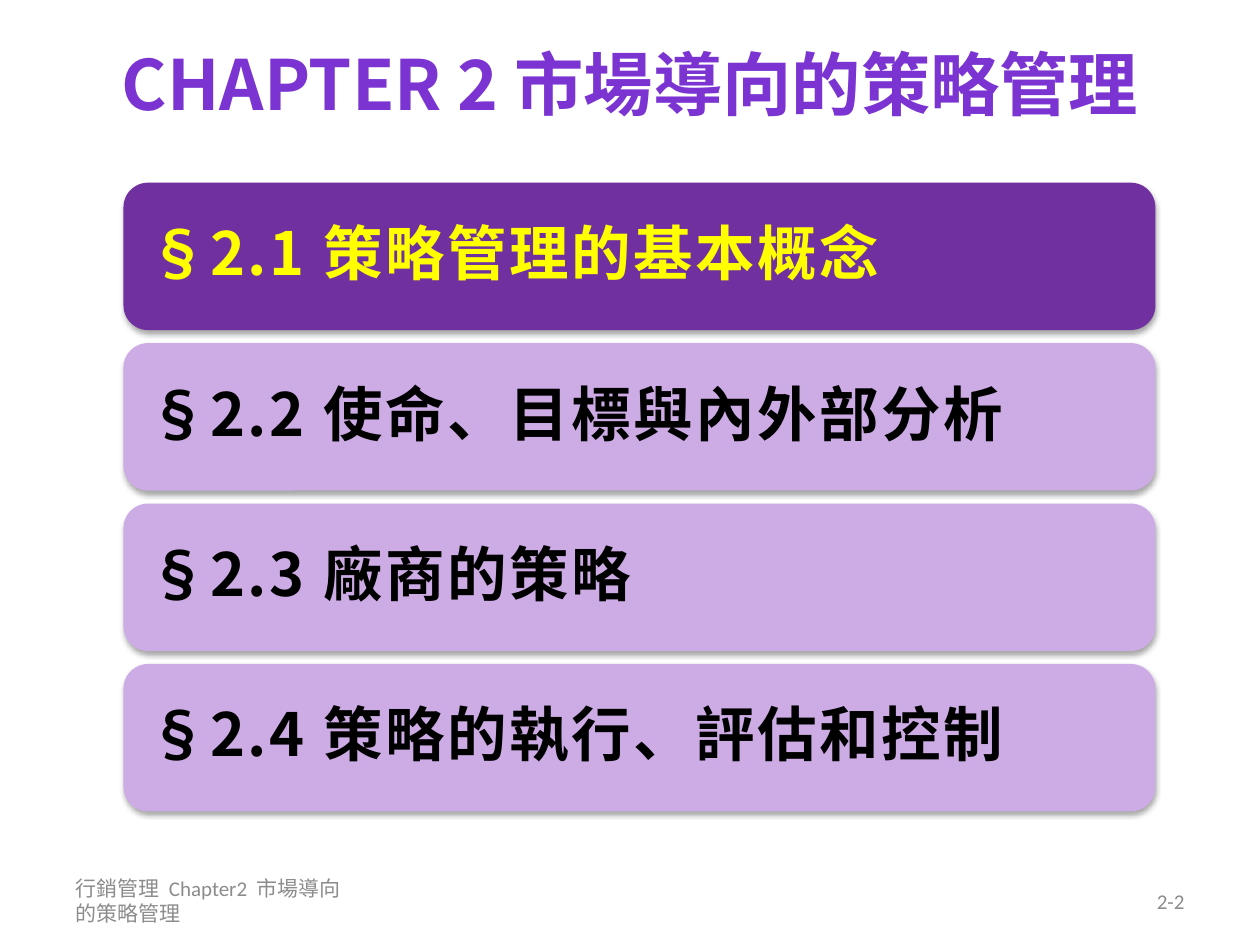
from lxml import etree
from pptx import Presentation
from pptx.dml.color import RGBColor
from pptx.enum.shapes import MSO_SHAPE
from pptx.enum.text import MSO_ANCHOR, MSO_AUTO_SIZE, PP_ALIGN
from pptx.oxml import parse_xml
from pptx.oxml.ns import qn
from pptx.util import Inches, Pt

ROUNDED = MSO_SHAPE.ROUNDED_RECTANGLE
MIDDLE = MSO_ANCHOR.MIDDLE
NO_FIT = MSO_AUTO_SIZE.NONE
LEFT, CENTER, RIGHT = PP_ALIGN.LEFT, PP_ALIGN.CENTER, PP_ALIGN.RIGHT
DRAWING = 'xmlns:a="http://schemas.openxmlformats.org/drawingml/2006/main"'

THEME = {
    "title": {"name": "Noto Sans CJK SC", "size": Pt(39.6), "bold": True},
    "section": {"name": "Noto Sans CJK SC", "size": Pt(34), "bold": True},
    "footer": {"name": "Calibri", "size": Pt(12), "bold": False},
    "title_stops": [(0, "3D1B67"), (43, "7B34D2"), (48, "7330C4"), (100, "3D1B67")],
    "title_outline": "5E457C",
    "footer_color": "8C8C8C",
    "current": ("7030A0", "FFFF00"),
    "other": ("CDACE6", "000000"),
}


def write(shape, text, style, align, color=None):
    """Fill a shape with one formatted, vertically centred paragraph."""
    frame = shape.text_frame
    for name, value in {"word_wrap": True, "auto_size": NO_FIT,
                        "vertical_anchor": MIDDLE}.items():
        setattr(frame, name, value)
    para = frame.paragraphs[0]
    para.alignment = align
    span = para.add_run()
    span.text = text
    for name, value in THEME[style].items():
        setattr(span.font, name, value)
    if color:
        span.font.color.rgb = RGBColor.from_string(color)
    properties = span.font._element
    east_asian = etree.SubElement(properties, qn("a:ea"))
    east_asian.set("typeface", THEME[style]["name"])
    return para, properties


deck = Presentation()
deck.slide_width, deck.slide_height = Inches(10), Inches(7.5)
page = deck.slides.add_slide(deck.slide_layouts[5])

# Title with a vertical gradient and a thin outline
title = page.shapes.title
title.left, title.top, title.width, title.height = map(Inches, (0.5, 0, 9, 1.31))
_, properties = write(title, "CHAPTER 2 市場導向的策略管理", "title", CENTER)
stops = "".join(f'<a:gs pos="{place * 1000}"><a:srgbClr val="{color}"/></a:gs>'
                for place, color in THEME["title_stops"])
properties.insert(0, parse_xml(
    f'<a:ln {DRAWING} w="{Pt(0.71)}"><a:solidFill>'
    f'<a:srgbClr val="{THEME["title_outline"]}"/></a:solidFill></a:ln>'))
properties.insert(1, parse_xml(
    f'<a:gradFill {DRAWING}><a:gsLst>{stops}</a:gsLst>'
    '<a:lin ang="5400000" scaled="0"/></a:gradFill>'))

# Section cards in one evenly spaced column
sections = ["§2.1 策略管理的基本概念", "§2.2 使命、目標與內外部分析",
            "§2.3 廠商的策略", "§2.4 策略的執行、評估和控制"]
column_left, column_top, column_width, column_height = 0.98, 1.45, 8.19, 4.99
card_height = 1.17
pitch = (column_height - card_height) / (len(sections) - 1)

for row, section in enumerate(sections):
    fill, ink = THEME["current" if row == 0 else "other"]
    card = page.shapes.add_shape(
        ROUNDED, Inches(column_left), Inches(column_top + row * pitch),
        Inches(column_width), Inches(card_height))
    card.fill.solid()
    card.fill.fore_color.rgb = RGBColor.from_string(fill)
    card.line.fill.background()
    card._element.spPr.append(parse_xml(
        f'<a:effectLst {DRAWING}><a:outerShdw blurRad="{Pt(3.1)}" dist="{Pt(1.8)}" '
        'dir="5400000" rotWithShape="0"><a:srgbClr val="000000">'
        '<a:alpha val="35000"/></a:srgbClr></a:outerShdw></a:effectLst>'))
    for side in ("left", "top", "right", "bottom"):
        setattr(card.text_frame, f"margin_{side}", Inches(0.14))
    para, properties = write(card, section, "section", LEFT, ink)
    properties.set("spc", "150")
    para.line_spacing = 0.9
    para._p.get_or_add_pPr().append(parse_xml(
        f'<a:spcAft {DRAWING}><a:spcPct val="35000"/></a:spcAft>'))

# Footer line: running title and page number
for left, text, align in ((0.5, "行銷管理  Chapter2  市場導向的策略管理", LEFT),
                          (7.17, "2-2", RIGHT)):
    box = page.shapes.add_textbox(Inches(left), Inches(6.95), Inches(2.33), Inches(0.4))
    write(box, text, "footer", align, THEME["footer_color"])

deck.save("out.pptx")
